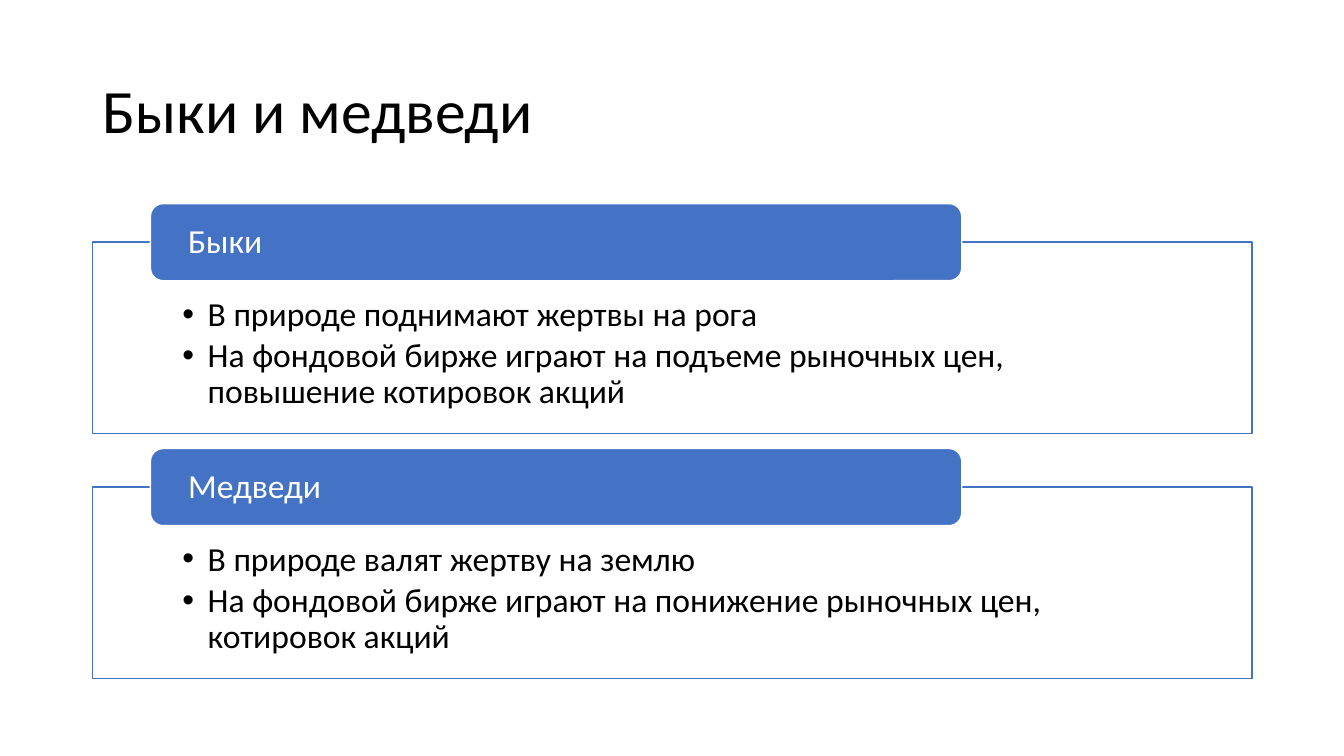
from lxml import etree
from pptx import Presentation
from pptx.dml.color import RGBColor
from pptx.enum import shapes, text
from pptx.oxml import ns
from pptx.util import Pt

BLUE = RGBColor(0x44, 0x72, 0xC4)
WHITE = RGBColor(0xFF, 0xFF, 0xFF)
BLACK = RGBColor(0, 0, 0)
FONT = "Calibri"

LEFT, WIDTH = 66.24, 828
FIRST_TOP, STEP = 172.8, 174.96
BOX_HEIGHT = 136.8
TAB_LEFT, TAB_RISE, TAB_WIDTH, TAB_HEIGHT = 107.4, 27.36, 579.6, 55.1

SECTIONS = [
    ("Быки", ["В природе поднимают жертвы на рога",
              "На фондовой бирже играют на подъеме рыночных цен, повышение котировок акций"]),
    ("Медведи", ["В природе валят жертву на землю",
                 "На фондовой бирже играют на понижение рыночных цен, котировок акций"]),
]


def place(sp, left, top, width, height):
    sp.left, sp.top, sp.width, sp.height = Pt(left), Pt(top), Pt(width), Pt(height)


def paint(sp, fill, line):
    sp.fill.solid()
    sp.fill.fore_color.rgb = fill
    sp.line.color.rgb = line
    sp.line.width = Pt(1)


def write(sp, lines, size=24, color=BLACK, anchor=text.MSO_ANCHOR.MIDDLE,
          insets=(7.2, 3.6, 7.2, 3.6), after=0, bullet=False):
    tf = sp.text_frame
    tf.text = "\n".join(lines)
    tf.word_wrap = True
    tf.auto_size = text.MSO_AUTO_SIZE.NONE
    tf.vertical_anchor = anchor
    tf.margin_left, tf.margin_top, tf.margin_right, tf.margin_bottom = map(Pt, insets)
    for p in tf.paragraphs:
        p.alignment = text.PP_ALIGN.LEFT
        p.line_spacing = 0.9
        p.space_before, p.space_after = Pt(0), Pt(after)
        for r in p.runs:
            r.font.name, r.font.size, r.font.color.rgb = FONT, Pt(size), color
        if bullet:
            add_bullet(p)


def add_bullet(p):
    pPr = p._p.get_or_add_pPr()
    pPr.set("marL", str(Pt(18)))
    pPr.set("indent", str(-Pt(18)))
    etree.SubElement(pPr, ns.qn("a:buFont"), typeface="Arial")
    etree.SubElement(pPr, ns.qn("a:buChar"), char="•")


def add_list_box(sp, top, items):
    place(sp, LEFT, top, WIDTH, BOX_HEIGHT)
    paint(sp, WHITE, BLUE)
    color = sp._element.spPr.find(ns.qn("a:solidFill"))[0]
    etree.SubElement(color, ns.qn("a:alpha"), val="90000")
    write(sp, items, anchor=text.MSO_ANCHOR.TOP,
          insets=(64.1, 39.6, 64.1, 13.7), after=3.6, bullet=True)


def add_tab(slide, top, heading):
    sp = slide.shapes.add_shape(shapes.MSO_SHAPE.ROUNDED_RECTANGLE, Pt(TAB_LEFT),
                                Pt(top - TAB_RISE), Pt(TAB_WIDTH), Pt(TAB_HEIGHT))
    sp.shadow.inherit = False
    paint(sp, BLUE, WHITE)
    write(sp, [heading], color=WHITE, insets=(24.3, 0, 24.3, 0))


def main():
    prs = Presentation()
    prs.slide_width, prs.slide_height = Pt(960), Pt(540)
    slide = prs.slides.add_slide(prs.slide_layouts[3])

    # Title
    title, *bodies = slide.placeholders
    place(title, LEFT, 28.8, WIDTH, 104.4)
    write(title, ["Быки и медведи"], size=44)

    # Framed lists with heading tabs
    for i, (body, (heading, items)) in enumerate(zip(bodies, SECTIONS)):
        top = FIRST_TOP + i * STEP
        add_list_box(body, top, items)
        add_tab(slide, top, heading)

    prs.save("out.pptx")


if __name__ == "__main__":
    main()
